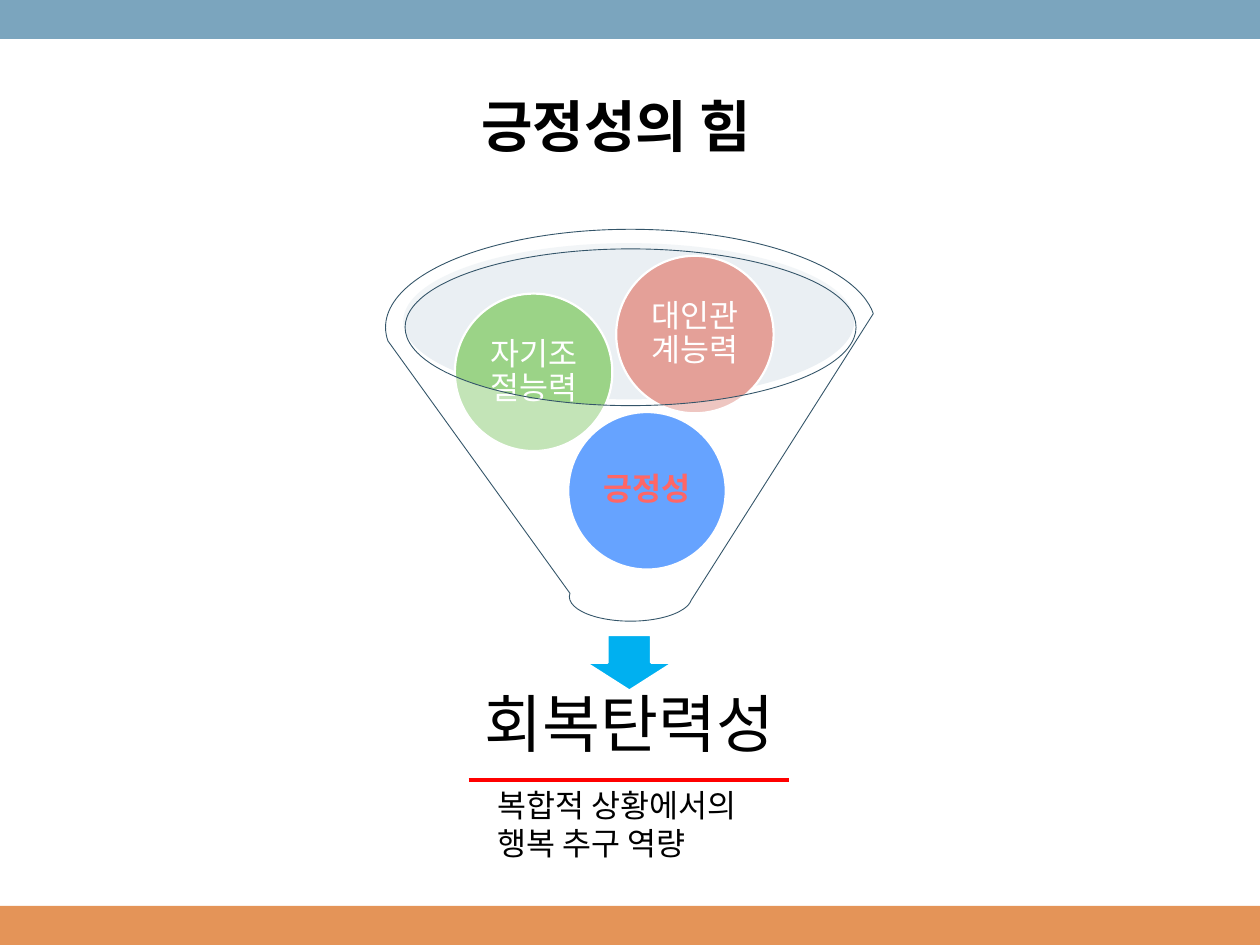
import pptx
import pptx.util
import pptx.dml.color
import pptx.enum.shapes
import pptx.enum.text
import pptx.oxml
import pptx.oxml.ns
from lxml import etree

Inches, Pt = pptx.util.Inches, pptx.util.Pt
SHAPE = pptx.enum.shapes.MSO_SHAPE
ALIGN = pptx.enum.text.PP_ALIGN
ANCHOR = pptx.enum.text.MSO_ANCHOR
qn = pptx.oxml.ns.qn

# Content
TITLE = "긍정성의 힘"
RESULT = "회복탄력성"
NOTE = "복합적 상황에서의\n행복 추구 역량"
FONT = "Cambria"
COLORS = {
    "blue": "7BA5BE", "orange": "E49458", "pale": "CBD8E2", "edge": "345569",
    "arrow": "00B0F0", "ball": "0066FF", "green": "9BD387", "pink": "E4A098",
    "red": "FF0000", "black": "000000", "white": "FFFFFF",
}
BALLS = [  # text, left, top, fill, font colour, bold
    ("긍정성", 4.51, 3.27, "ball", "red", True),
    ("자기조절능력", 3.61, 2.33, "green", "white", False),
    ("대인관계능력", 4.89, 2.03, "pink", "white", False),
]
WIDE, HIGH, BAR, BALL = 10, 7.5, 0.31, 1.25

deck = pptx.Presentation()
deck.slide_width, deck.slide_height = Inches(WIDE), Inches(HIGH)
slide = deck.slides.add_slide(deck.slide_layouts[6])


def color(name):
    return pptx.dml.color.RGBColor.from_string(COLORS[name])


def draw(kind, box, fill, line=None, width=1.25, alpha=None):
    shape = slide.shapes.add_shape(kind, *map(Inches, box))
    shape.shadow.inherit = False
    shape.fill.solid()
    shape.fill.fore_color.rgb = color(fill)
    if alpha:
        tone = shape.fill._xPr.find(qn("a:solidFill"))[0]
        etree.SubElement(tone, qn("a:alpha")).set("val", str(alpha * 1000))
    if line:
        shape.line.color.rgb = color(line)
        shape.line.width = Pt(width)
    else:
        shape.line.fill.background()
    return shape


def write(shape, text, size, tone="black", bold=False, inset=None, wrap=True):
    frame = shape.text_frame
    frame.text = text
    frame.word_wrap = wrap
    if inset is not None:  # centred label
        frame.vertical_anchor = ANCHOR.MIDDLE
        frame.margin_left = frame.margin_right = Inches(inset)
        frame.margin_top = frame.margin_bottom = Inches(inset)
    for para in frame.paragraphs:
        if inset is not None:
            para.alignment = ALIGN.CENTER
            para.line_spacing = 0.9
        for run in para.runs:
            run.font.name, run.font.size = FONT, Pt(size)
            run.font.bold = bold
            run.font.color.rgb = color(tone)


def label(box, text, size, **style):
    write(slide.shapes.add_textbox(*map(Inches, box)), text, size, **style)


# Bars and title
draw(SHAPE.RECTANGLE, (0, HIGH - BAR, WIDE, BAR), "orange")
draw(SHAPE.RECTANGLE, (0, 0, WIDE, BAR), "blue")
label((3.72, 0.68, 2.54, 0.64), TITLE, 32, bold=True, wrap=False)

# Funnel with its balls, arrow and result
draw(SHAPE.OVAL, (3.2, 1.93, 3.58, 1.24), "pale", alpha=40)
draw(SHAPE.DOWN_ARROW, (4.65, 5.04, 0.69, 0.44), "arrow", "white")
label((2.24, 5.36, 5.51, 0.83), RESULT, 36, inset=0.28)
for text, left, top, fill, tone, bold in BALLS:
    ball = draw(SHAPE.OVAL, (left, top, BALL, BALL), fill, "white")
    write(ball, text, 18, tone, bold, inset=0.03)
draw(SHAPE.FUNNEL, (3.06, 1.82, 3.89, 3.11), "white", "edge", 0.5, alpha=40)

# Note under a red rule
label((3.85, 6.19, 2.28, 0.71), NOTE, 18, wrap=False)
rule = slide.shapes.add_connector(
    pptx.enum.shapes.MSO_CONNECTOR.STRAIGHT,
    Inches(3.72), Inches(6.19), Inches(6.26), Inches(6.19))
rule.line.color.rgb = color("red")
rule.line.width = Pt(2.25)
etree.SubElement(rule._element.spPr, qn("a:effectLst"))

deck.save("out.pptx")
